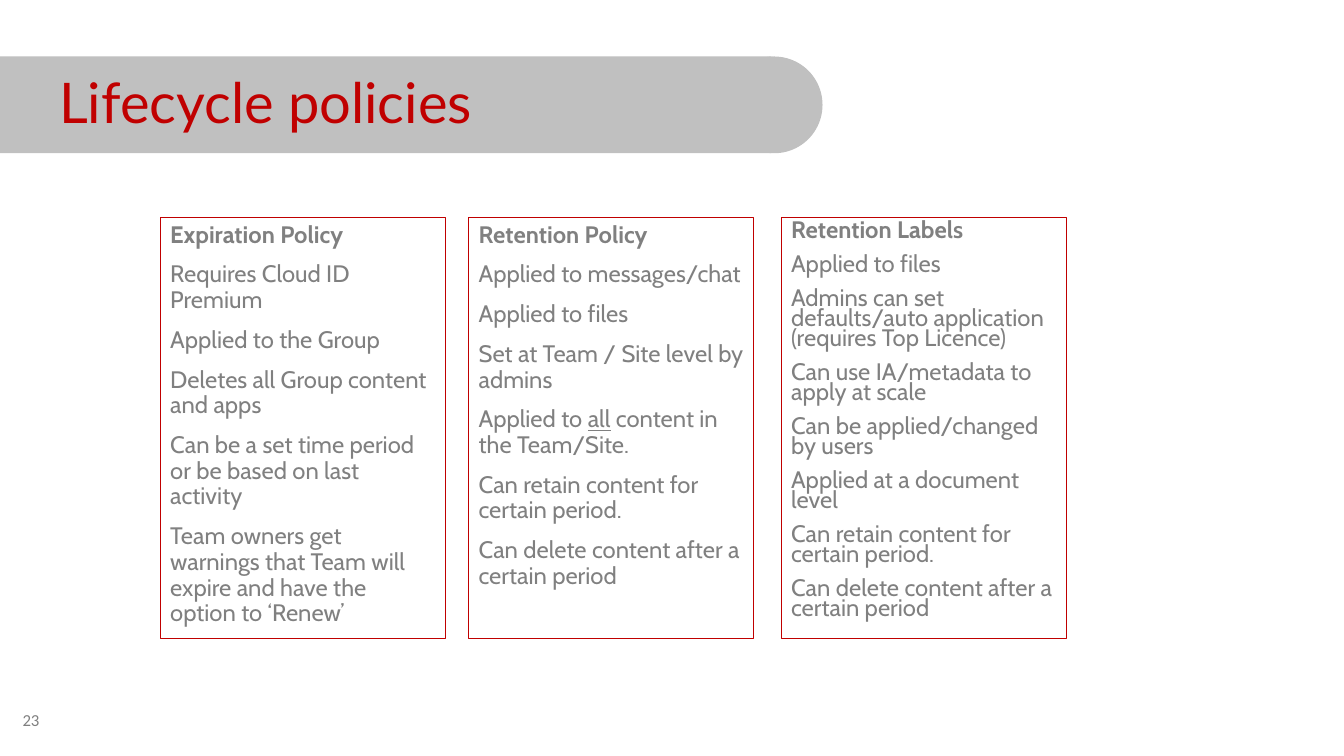
import pptx
import pptx.util
import pptx.dml.color
import pptx.enum.shapes
import pptx.enum.text

Pt = pptx.util.Pt
SHAPE = pptx.enum.shapes.MSO_SHAPE
ALIGN = pptx.enum.text.PP_ALIGN
ANCHOR = pptx.enum.text.MSO_ANCHOR


def color(value):
    return pptx.dml.color.RGBColor.from_string(value)


class Deck:
    red = "C00000"
    gray = "808080"
    banner = "C0C0C0"

    def __init__(self):
        self.prs = pptx.Presentation()
        self.prs.slide_width = Pt(960)
        self.prs.slide_height = Pt(540)
        self.s = self.prs.slides.add_slide(self.prs.slide_layouts[6])

    def shape(self, kind, x, y, w, h, fill=None, line=None, rotation=0):
        sp = self.s.shapes.add_shape(kind, Pt(x), Pt(y), Pt(w), Pt(h))
        sp.shadow.inherit = False
        sp.rotation = rotation
        if fill:
            sp.fill.solid()
            sp.fill.fore_color.rgb = color(fill)
        else:
            sp.fill.background()
        if line:
            sp.line.color.rgb = color(line)
            sp.line.width = Pt(0.75)
        else:
            sp.line.fill.background()
        return sp

    def style(self, p, font, size, ink, bold=False):
        p.font.name = font
        p.font.size = Pt(size)
        p.font.color.rgb = color(ink)
        p.font.bold = bold

    def text(self, text, x, y, w, h, font, size, ink, align=ALIGN.LEFT,
             anchor=ANCHOR.TOP, spacing=1.0):
        tf = self.s.shapes.add_textbox(Pt(x), Pt(y), Pt(w), Pt(h)).text_frame
        tf.word_wrap = True
        tf.vertical_anchor = anchor
        p = tf.paragraphs[0]
        p.text = text
        p.alignment = align
        p.line_spacing = spacing
        self.style(p, font, size, ink)

    def card(self, x, spacing, lines):
        sp = self.shape(SHAPE.RECTANGLE, x, 155.5, 203.8, 300.3, line=self.red)
        tf = sp.text_frame
        tf.word_wrap = True
        tf.vertical_anchor = ANCHOR.TOP
        for i, line in enumerate(lines):
            p = tf.add_paragraph() if i else tf.paragraphs[0]
            p.alignment = ALIGN.LEFT
            p.line_spacing = spacing
            p.space_before = Pt(10 if i else 0)
            for j, part in enumerate(line.split("_")):
                r = p.add_run()
                r.text = part
                if j % 2:
                    r.font.underline = True
            self.style(p, "Cabin", 17, self.gray, bold=i == 0)


CARDS = [
    (114.5, 0.9, [
        "Expiration Policy",
        "Requires Cloud ID Premium",
        "Applied to the Group",
        "Deletes all Group content and apps",
        "Can be a set time period or be based on last activity",
        "Team owners get warnings that Team will expire and have the option to ‘Renew’",
    ]),
    (334.8, 0.9, [
        "Retention Policy",
        "Applied to messages/chat",
        "Applied to files",
        "Set at Team / Site level by admins",
        "Applied to _all_ content in the Team/Site.",
        "Can retain content for certain period.",
        "Can delete content after a certain period",
    ]),
    (558, 0.7, [
        "Retention Labels",
        "Applied to files",
        "Admins can set defaults/auto application (requires Top Licence)",
        "Can use IA/metadata to apply at scale",
        "Can be applied/changed by users",
        "Applied at a document level",
        "Can retain content for certain period.",
        "Can delete content after a certain period",
    ]),
]


def main():
    d = Deck()
    d.shape(SHAPE.ROUNDED_RECTANGLE, -22.3, 40.3, 584, 69.1, fill=d.banner)
    d.shape(SHAPE.CHORD, 518.4, 40.3, 69.1, 69.1, fill=d.banner, rotation=202.6)
    d.text("Lifecycle policies", 35.3, 50.4, 543.6, 59, "Lato", 40, d.red, spacing=0.9)
    for x, spacing, lines in CARDS:
        d.card(x, spacing, lines)
    d.text("23", 0, 501.8, 35.3, 25.2, "Calibri", 12, d.gray,
           align=ALIGN.RIGHT, anchor=ANCHOR.MIDDLE)
    d.prs.save("out.pptx")


if __name__ == "__main__":
    main()
